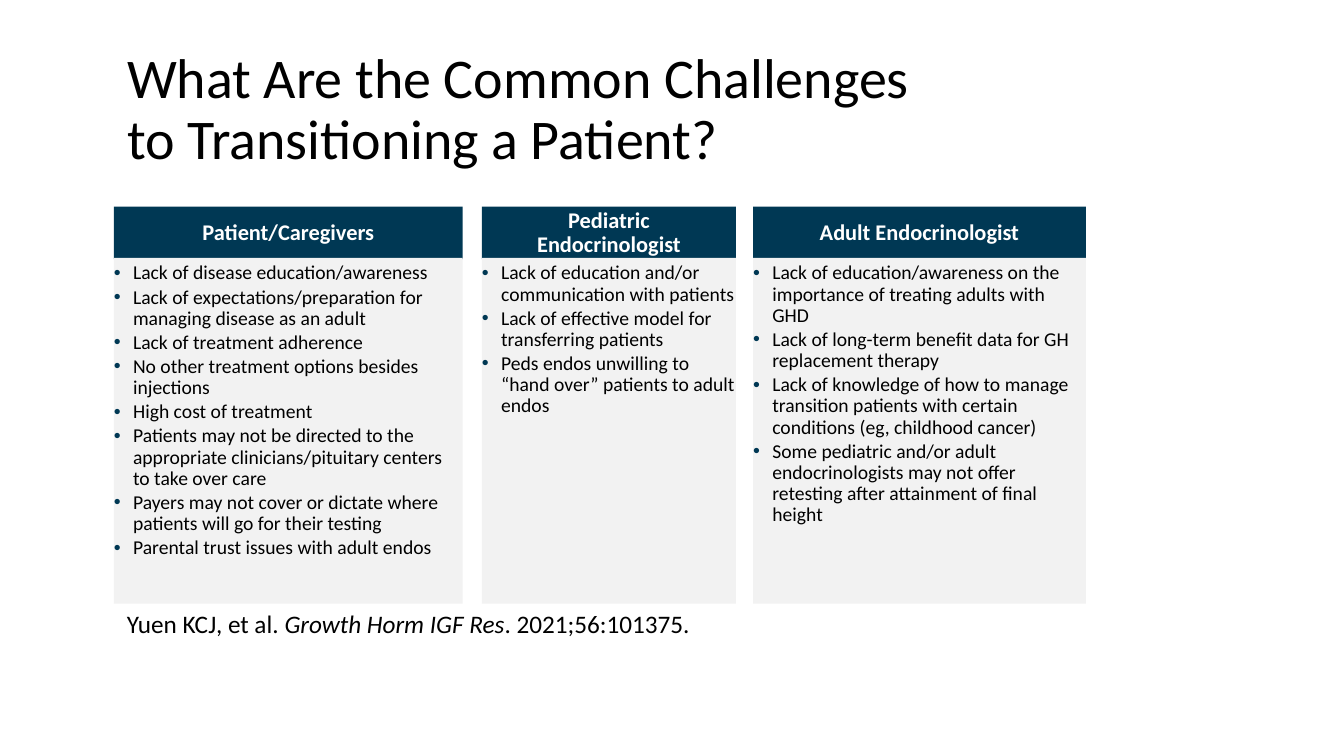
from lxml.etree import SubElement
from pptx import Presentation
from pptx.dml.color import RGBColor
from pptx.enum.shapes import MSO_SHAPE
from pptx.enum.text import MSO_ANCHOR, MSO_AUTO_SIZE, PP_ALIGN
from pptx.oxml.ns import qn
from pptx.util import Inches, Pt

NAVY = RGBColor(0x00, 0x38, 0x54)
GRAY = RGBColor(0xF2, 0xF2, 0xF2)
BLACK = RGBColor(0x00, 0x00, 0x00)
WHITE = RGBColor(0xFF, 0xFF, 0xFF)

HEADER_TOP, HEADER_HEIGHT = 2.05, 0.52
BODY_TOP, BODY_HEIGHT = 2.56, 3.43
BULLET_INDENT = Inches(0.19)

COLUMNS = [
    (1.13, 3.46, "Patient/Caregivers", [
        "Lack of disease education/awareness",
        "Lack of expectations/preparation for managing disease as an adult",
        "Lack of treatment adherence",
        "No other treatment options besides injections",
        "High cost of treatment",
        "Patients may not be directed to the appropriate clinicians/pituitary centers to take over care",
        "Payers may not cover or dictate where patients will go for their testing",
        "Parental trust issues with adult endos",
    ]),
    (4.78, 2.52, "Pediatric Endocrinologist", [
        "Lack of education and/or communication with patients",
        "Lack of effective model for transferring patients",
        "Peds endos unwilling to “hand over” patients to adult endos",
    ]),
    (7.47, 3.3, "Adult Endocrinologist", [
        "Lack of education/awareness on the importance of treating adults with GHD",
        "Lack of long-term benefit data for GH replacement therapy",
        "Lack of knowledge of how to manage transition patients with certain conditions (eg, childhood cancer)",
        "Some pediatric and/or adult endocrinologists may not offer retesting after attainment of final height",
    ]),
]


def write_text(paragraph, text, size, color=BLACK, bold=False, italic=False,
               align=PP_ALIGN.LEFT, line_spacing=None, bullet=False):
    if bullet:
        paragraph.level = 1
        properties = paragraph._p.get_or_add_pPr()
        properties.set("marL", str(BULLET_INDENT))
        properties.set("indent", str(-BULLET_INDENT))
        bullet_color = SubElement(properties, qn("a:buClr"))
        SubElement(bullet_color, qn("a:srgbClr"), val=str(NAVY))
        SubElement(properties, qn("a:buFont"), typeface="Arial")
        SubElement(properties, qn("a:buChar"), char="•")
        paragraph.space_after = Pt(2.1)
    paragraph.alignment = align
    if line_spacing:
        paragraph.line_spacing = line_spacing
    for index, line in enumerate(text.split("\n")):
        if index:
            paragraph.add_line_break()
        run = paragraph.add_run()
        run.text = line
        run.font.name = "Calibri"
        run.font.size = Pt(size)
        run.font.color.rgb = color
        run.font.bold = bold
        run.font.italic = italic


def add_panel(slide, left, top, width, height, fill, anchor, margins):
    shape = slide.shapes.add_shape(
        MSO_SHAPE.RECTANGLE, Inches(left), Inches(top), Inches(width), Inches(height))
    shape.shadow.inherit = False
    shape.fill.solid()
    shape.fill.fore_color.rgb = fill
    shape.line.fill.background()
    frame = shape.text_frame
    frame.word_wrap = True
    frame.vertical_anchor = anchor
    (frame.margin_left, frame.margin_top,
     frame.margin_right, frame.margin_bottom) = [Inches(margin) for margin in margins]
    return frame


presentation = Presentation()
presentation.slide_width = Inches(13.33)
presentation.slide_height = Inches(7.5)
slide = presentation.slides.add_slide(presentation.slide_layouts[5])

title = slide.shapes.title
title.left, title.top = Inches(1.16), Inches(0.45)
title.width, title.height = Inches(10.87), Inches(0.9)
title.text_frame.word_wrap = True
title.text_frame.auto_size = MSO_AUTO_SIZE.NONE
title.text_frame.vertical_anchor = MSO_ANCHOR.TOP
write_text(title.text_frame.paragraphs[0],
           "What Are the Common Challenges \nto Transitioning a Patient?",
           size=40, line_spacing=0.9)

for left, width, heading, challenges in COLUMNS:
    header = add_panel(slide, left, HEADER_TOP, width, HEADER_HEIGHT, NAVY,
                       MSO_ANCHOR.MIDDLE, (0.14, 0.08, 0.14, 0.08))
    write_text(header.paragraphs[0], heading, size=16, color=WHITE, bold=True,
               align=PP_ALIGN.CENTER, line_spacing=0.9)
    body = add_panel(slide, left, BODY_TOP, width, BODY_HEIGHT, GRAY,
                     MSO_ANCHOR.TOP, (0, 0.05, 0, 0))
    for index, challenge in enumerate(challenges):
        paragraph = body.add_paragraph() if index else body.paragraphs[0]
        write_text(paragraph, challenge, size=14, line_spacing=0.9, bullet=True)

citation = slide.shapes.add_textbox(Inches(1.16), Inches(5.99), Inches(9.09), Inches(0.39))
citation.text_frame.word_wrap = True
for text, italic in [("Yuen KCJ, et al. ", False),
                     ("Growth Horm IGF Res", True),
                     (". 2021;56:101375.", False)]:
    write_text(citation.text_frame.paragraphs[0], text, size=18, italic=italic)

presentation.save("out.pptx")
